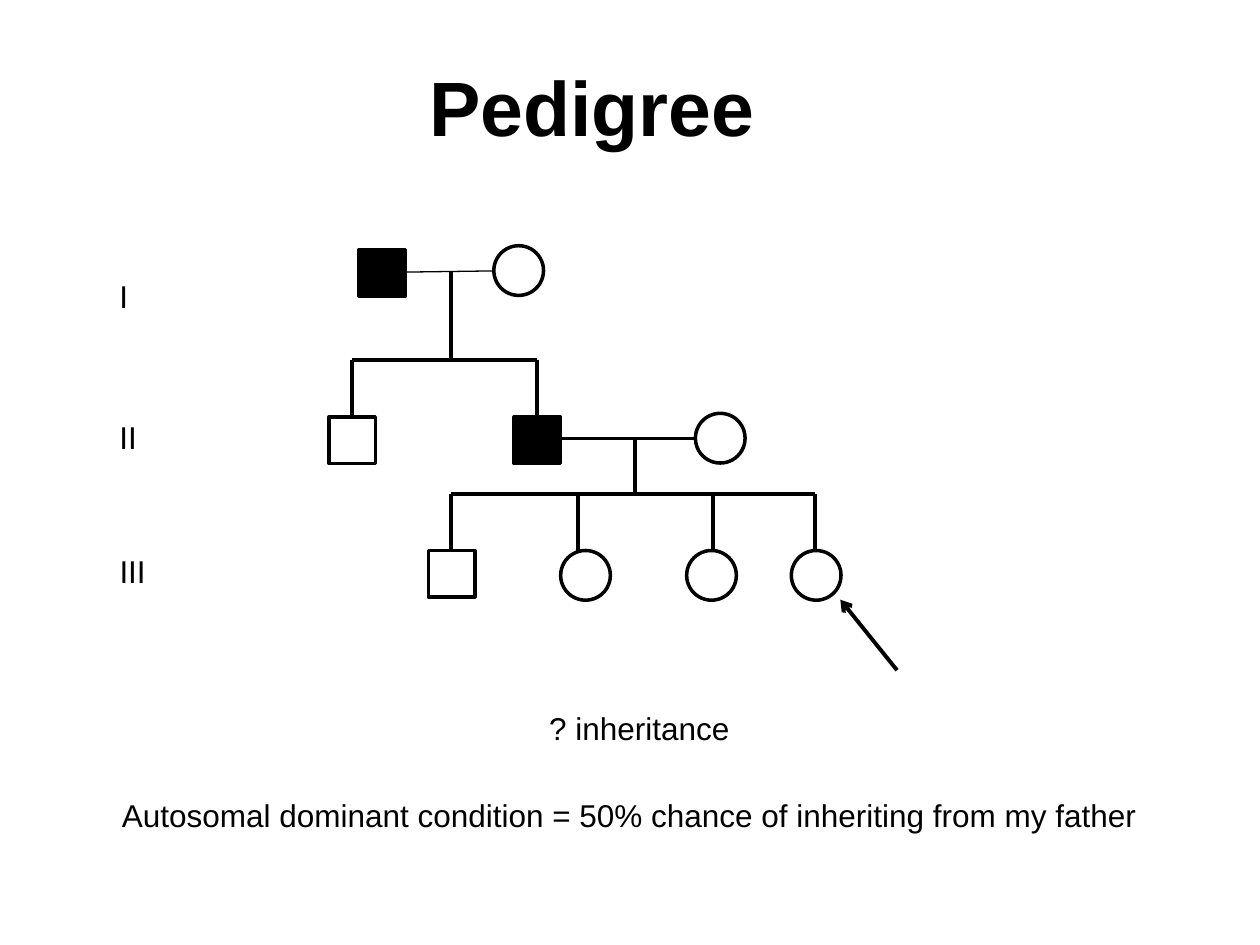
from dataclasses import dataclass

from lxml.etree import SubElement
from pptx import Presentation
from pptx.dml.color import RGBColor
from pptx.enum.shapes import MSO_CONNECTOR, MSO_SHAPE
from pptx.enum.text import MSO_ANCHOR, MSO_AUTO_SIZE, PP_ALIGN
from pptx.oxml.ns import qn
from pptx.slide import Slide
from pptx.util import Pt


@dataclass(frozen=True)
class Theme:
    ink: RGBColor = RGBColor(0, 0, 0)
    paper: RGBColor = RGBColor(255, 255, 255)
    font: str = "Arial"
    title_size: float = 44
    body_size: float = 18
    outline: float = 2
    branch: float = 2.25
    thin: float = 0.75
    male_side: float = 26.6
    female_side: float = 28.4


@dataclass(frozen=True)
class Person:
    left: float
    top: float
    male: bool = False
    affected: bool = False
    rotation: float = 0


@dataclass(frozen=True)
class Link:
    x1: float
    y1: float
    x2: float
    y2: float
    width: float
    arrow: bool = False


@dataclass(frozen=True)
class Label:
    text: str
    left: float
    top: float
    width: float
    height: float = 29
    title: bool = False


@dataclass(frozen=True)
class Family:
    parent_x: float
    parent_y: float
    sibling_y: float
    child_y: float
    children: tuple[float, ...]


THEME = Theme()

PEOPLE = (
    Person(282.2, 140.4, rotation=180),
    Person(205.2, 142.6, male=True, affected=True, rotation=180),
    Person(187.9, 238.3, male=True),
    Person(293.8, 238.3, male=True, affected=True),
    Person(397.4, 236.2),
    Person(244.8, 314.6, male=True),
    Person(320.4, 314.6),
    Person(392.4, 314.6),
    Person(452.2, 314.6),
)

FAMILIES = (
    Family(257.8, 154.8, 205.9, 238.3, (200.9, 306.9)),
    Family(362.9, 250.6, 282.2, 314.6, (257.8, 330.5, 407.5, 465.8)),
)

LINKS = (
    Link(282.2, 154.8, 231.8, 155.5, THEME.thin),
    Link(320.4, 250.6, 397.4, 250.6, THEME.branch),
    Link(512.6, 383, 480.2, 342.7, THEME.branch, arrow=True),
)

LABELS = (
    Label("Pedigree", 14.4, 15.1, 648, 90, title=True),
    Label("I", 61.2, 154.8, 19.4),
    Label("II", 61.2, 235.4, 24.5),
    Label("III", 61.2, 311.8, 29.5),
    Label("? inheritance", 306.7, 401.8, 118.8),
    Label("Autosomal dominant condition = 50% chance of inheriting from my father",
          62.6, 451.4, 599.8),
)


def family_links(family: Family) -> list[Link]:
    ends = min(family.children), max(family.children)
    stem = Link(family.parent_x, family.parent_y, family.parent_x, family.sibling_y, THEME.branch)
    bar = Link(ends[0], family.sibling_y, ends[1], family.sibling_y, THEME.branch)
    drops = [Link(x, family.sibling_y, x, family.child_y, THEME.branch) for x in family.children]
    return [stem, bar, *drops]


def draw_link(slide: Slide, link: Link) -> None:
    connector = slide.shapes.add_connector(
        MSO_CONNECTOR.STRAIGHT, Pt(link.x1), Pt(link.y1), Pt(link.x2), Pt(link.y2))
    connector.line.color.rgb = THEME.ink
    connector.line.width = Pt(link.width)
    properties = connector.element.spPr
    if link.arrow:
        SubElement(properties.find(qn("a:ln")), qn("a:tailEnd"), type="arrow")
    SubElement(properties, qn("a:effectLst"))


def draw_person(slide: Slide, person: Person) -> None:
    kind = MSO_SHAPE.RECTANGLE if person.male else MSO_SHAPE.OVAL
    side = Pt(THEME.male_side if person.male else THEME.female_side)
    shape = slide.shapes.add_shape(kind, Pt(person.left), Pt(person.top), side, side)
    shape.rotation = person.rotation
    shape.shadow.inherit = False
    shape.fill.solid()
    shape.fill.fore_color.rgb = THEME.ink if person.affected else THEME.paper
    shape.line.color.rgb = THEME.ink
    shape.line.width = Pt(THEME.outline)


def draw_label(slide: Slide, label: Label) -> None:
    shape = slide.shapes.add_textbox(
        Pt(label.left), Pt(label.top), Pt(label.width), Pt(label.height))
    frame_format = {
        "word_wrap": label.title,
        "auto_size": MSO_AUTO_SIZE.NONE if label.title else MSO_AUTO_SIZE.SHAPE_TO_FIT_TEXT,
        "vertical_anchor": MSO_ANCHOR.MIDDLE if label.title else MSO_ANCHOR.TOP,
    }
    for name, value in frame_format.items():
        setattr(shape.text_frame, name, value)
    paragraph = shape.text_frame.paragraphs[0]
    paragraph.alignment = PP_ALIGN.CENTER if label.title else PP_ALIGN.LEFT
    run = paragraph.add_run()
    run.text = label.text
    font_format = {
        "name": THEME.font,
        "size": Pt(THEME.title_size if label.title else THEME.body_size),
        "bold": label.title,
    }
    for name, value in font_format.items():
        setattr(run.font, name, value)
    run.font.color.rgb = THEME.ink


def main() -> None:
    presentation = Presentation()
    presentation.slide_width = Pt(720)
    presentation.slide_height = Pt(540)
    slide = presentation.slides.add_slide(presentation.slide_layouts[6])
    for link in LINKS:
        draw_link(slide, link)
    for family in FAMILIES:
        for link in family_links(family):
            draw_link(slide, link)
    for person in PEOPLE:
        draw_person(slide, person)
    for label in LABELS:
        draw_label(slide, label)
    presentation.save("out.pptx")


if __name__ == "__main__":
    main()
